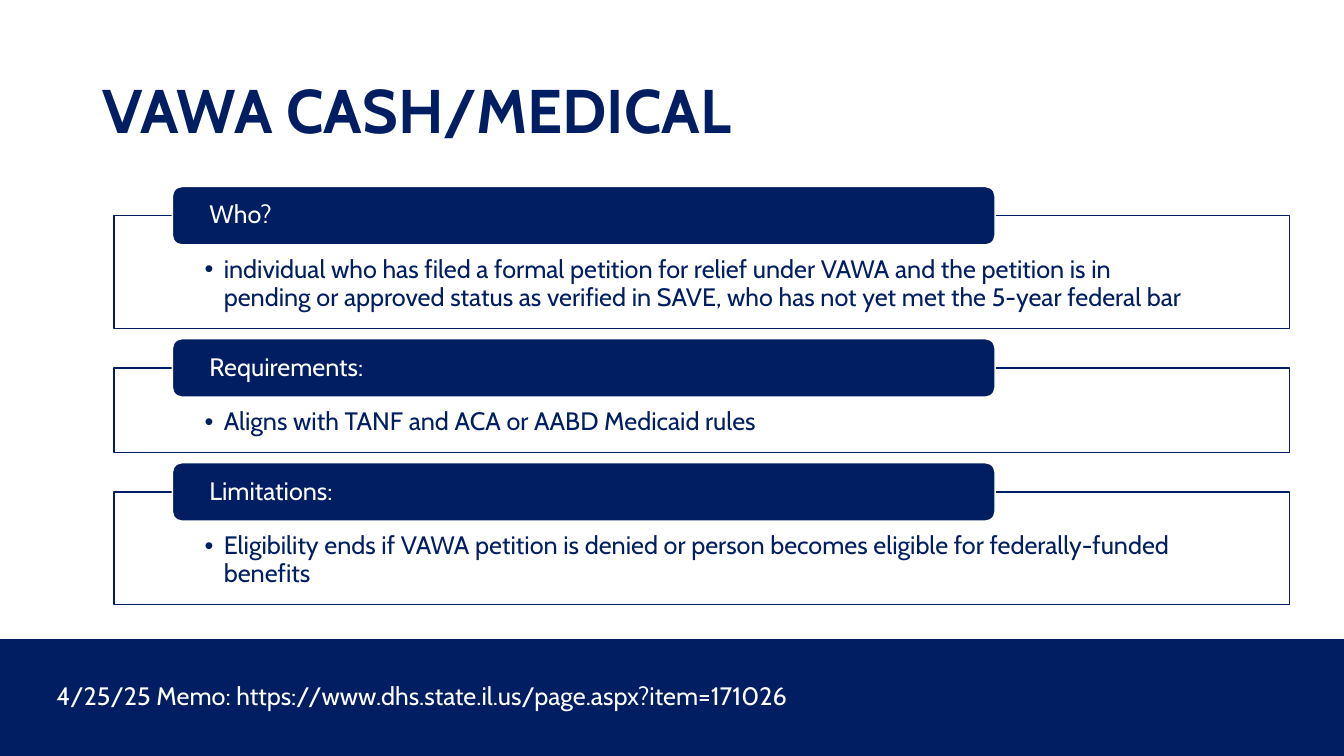
from dataclasses import dataclass

from lxml.etree import SubElement
from pptx import Presentation
from pptx.dml.color import RGBColor
from pptx.enum.shapes import MSO_SHAPE as Shape
from pptx.enum.text import MSO_ANCHOR as Anchor, MSO_AUTO_SIZE as AutoSize, PP_ALIGN as Align
from pptx.oxml.ns import qn
from pptx.util import Inches, Pt

COLORS = {"navy": "001E61", "white": "FFFFFF"}
FONT = "Cabin"
PANEL_LEFT, PANEL_WIDTH, FIRST_TOP, PANEL_GAP = 1.13, 11.66, 2.14, 0.39
PANEL_BASE, LINE_HEIGHT = 0.56, 0.28
TAB_LEFT, TAB_WIDTH, TAB_HEIGHT = 1.71, 8.16, 0.58


@dataclass
class Section:
    """A headed panel with one bullet and the number of lines it takes."""
    heading: str
    detail: str
    lines: int

    @property
    def height(self) -> float:
        return PANEL_BASE + LINE_HEIGHT * self.lines


SECTIONS = [
    Section("Who?", "individual who has filed a formal petition for relief under VAWA and the "
            "petition is in pending or approved status as verified in SAVE, who has not yet "
            "met the 5-year federal bar", 2),
    Section("Requirements:", "Aligns with TANF and ACA or AABD Medicaid rules", 1),
    Section("Limitations:", "Eligibility ends if VAWA petition is denied or person becomes "
            "eligible for federally-funded benefits", 2),
]


def color(name: str) -> RGBColor:
    """Look up a named colour."""
    return RGBColor.from_string(COLORS[name])


def place(shape, left: float, top: float, width: float, height: float) -> None:
    """Move and size a shape in inches."""
    shape.left, shape.top = Inches(left), Inches(top)
    shape.width, shape.height = Inches(width), Inches(height)


def write(box, text: str, ink: str, size: float = 18, bold: bool = False, spacing: float = 1.0):
    """Fill a box with one left-aligned paragraph and return it."""
    box.text_frame.text = text
    box.text_frame.word_wrap = True
    para = box.text_frame.paragraphs[0]
    para.alignment = Align.LEFT
    para.line_spacing = spacing
    for span in para.runs:
        span.font.name, span.font.size, span.font.bold = FONT, Pt(size), bold
        span.font.color.rgb = color(ink)
    return para


def set_insets(box, left: float, top: float, right: float, bottom: float) -> None:
    """Set the text margins of a box in inches."""
    frame = box.text_frame
    frame.margin_left, frame.margin_top = Inches(left), Inches(top)
    frame.margin_right, frame.margin_bottom = Inches(right), Inches(bottom)


def add_block(page, kind: Shape, area: tuple, fill: str, line: str | None = None):
    """Add a flat filled shape with an optional one-point outline."""
    box = page.shapes.add_shape(kind, *map(Inches, area))
    box.shadow.inherit = False
    box.fill.solid()
    box.fill.fore_color.rgb = color(fill)
    if line:
        box.line.color.rgb = color(line)
        box.line.width = Pt(1)
    else:
        box.line.fill.background()
    return box


def add_bullet(para) -> None:
    """Give a paragraph a hanging round bullet."""
    props = para._p.get_or_add_pPr()
    props.set("marL", str(Inches(0.19)))
    props.set("indent", str(-Inches(0.19)))
    SubElement(props, qn("a:buFont"), typeface="Arial")
    SubElement(props, qn("a:buChar"), char="•")


def add_section(page, section: Section, top: float) -> None:
    """Draw a panel and the heading tab on its upper edge."""
    panel = add_block(page, Shape.RECTANGLE, (PANEL_LEFT, top, PANEL_WIDTH, section.height),
                      "white", "navy")
    fill_color = panel.fill._xPr.find(qn("a:solidFill"))[0]
    SubElement(fill_color, qn("a:alpha"), val="90000")
    panel.text_frame.vertical_anchor = Anchor.TOP
    set_insets(panel, 0.9, 0.41, 0.9, 0.14)
    add_bullet(write(panel, section.detail, "navy", spacing=0.9))

    tab = add_block(page, Shape.ROUNDED_RECTANGLE,
                    (TAB_LEFT, top - TAB_HEIGHT / 2, TAB_WIDTH, TAB_HEIGHT), "navy", "white")
    tab.text_frame.vertical_anchor = Anchor.MIDDLE
    set_insets(tab, 0.34, 0, 0.34, 0)
    write(tab, section.heading, "white", spacing=0.9)


def main() -> None:
    """Build and save the slide."""
    deck = Presentation()
    deck.slide_width, deck.slide_height = Inches(13.33), Inches(7.5)
    page = deck.slides.add_slide(deck.slide_layouts[5])
    add_block(page, Shape.RECTANGLE, (0, 6.34, 13.33, 1.16), "navy")

    title = page.shapes.title
    place(title, 0.92, 0.4, 11.5, 1.45)
    title.text_frame.vertical_anchor = Anchor.MIDDLE
    title.text_frame.auto_size = AutoSize.NONE
    write(title, "VAWA CASH/MEDICAL", "navy", size=44, bold=True, spacing=0.9)

    memo = page.shapes.add_textbox(*map(Inches, (0.46, 6.7, 7.75, 0.4)))
    write(memo, "4/25/25 Memo: https://www.dhs.state.il.us/page.aspx?item=171026", "white")

    top = FIRST_TOP
    for section in SECTIONS:
        add_section(page, section, top)
        top += section.height + PANEL_GAP
    deck.save("out.pptx")


if __name__ == "__main__":
    main()
